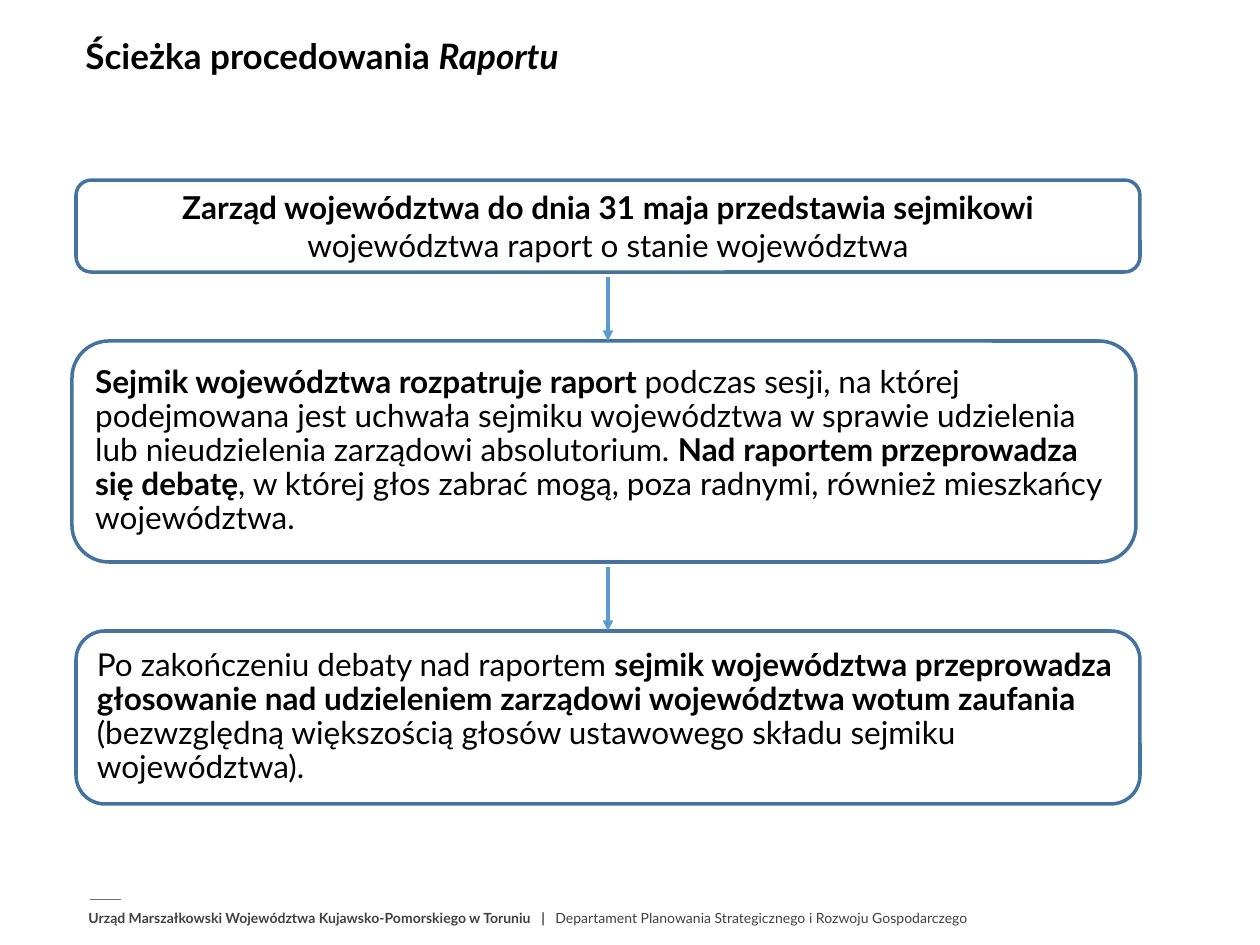
from dataclasses import dataclass

from lxml import etree
from pptx import Presentation
from pptx.dml.color import RGBColor
from pptx.enum.shapes import MSO_CONNECTOR, MSO_SHAPE
from pptx.enum.text import MSO_ANCHOR, PP_ALIGN
from pptx.oxml.ns import qn
from pptx.util import Emu, Pt

EMU_PER_PX = 914400 / 126
ROUNDED = MSO_SHAPE.ROUNDED_RECTANGLE
STRAIGHT = MSO_CONNECTOR.STRAIGHT
TOP, MIDDLE, BOTTOM = MSO_ANCHOR.TOP, MSO_ANCHOR.MIDDLE, MSO_ANCHOR.BOTTOM
LEFT, CENTER = PP_ALIGN.LEFT, PP_ALIGN.CENTER
BLACK, GREY, RULE_GREY = "000000", "414141", "6E6E6E"
BOX_BLUE, ARROW_BLUE = "43739E", "5B9BD5"


@dataclass(frozen=True)
class Run:
    text: str
    bold: bool = False
    italic: bool = False


@dataclass(frozen=True)
class Frame:
    left: int
    top: int
    width: int
    height: int


@dataclass(frozen=True)
class TextStyle:
    size: int
    color: str = BLACK
    anchor: MSO_ANCHOR = MIDDLE
    alignment: PP_ALIGN = LEFT
    line_spacing: float | Pt = 0.9
    tabs: tuple[int, ...] = ()


@dataclass(frozen=True)
class Step:
    frame: Frame
    style: TextStyle
    runs: tuple[Run, ...]


@dataclass(frozen=True)
class Line:
    start: tuple[int, int]
    end: tuple[int, int]
    color: str
    weight: float
    arrow: bool = False


def px(value: int) -> Emu:
    return Emu(round(value * EMU_PER_PX))


def rgb(color: str) -> RGBColor:
    return RGBColor.from_string(color)


def apply(target, values: dict) -> None:
    for name, value in values.items():
        setattr(target, name, value)


def place(frame: Frame) -> list[Emu]:
    return [px(v) for v in (frame.left, frame.top, frame.width, frame.height)]


def write_text(shape, runs: tuple[Run, ...], style: TextStyle) -> None:
    apply(shape.text_frame, {"word_wrap": True, "vertical_anchor": style.anchor})
    paragraph = shape.text_frame.paragraphs[0]
    if style.tabs:
        properties = paragraph._p.get_or_add_pPr()
        tab_list = etree.SubElement(properties, qn("a:tabLst"))
        for position in style.tabs:
            etree.SubElement(tab_list, qn("a:tab"), pos=str(px(position)), algn="l")
    apply(paragraph, {"alignment": style.alignment, "line_spacing": style.line_spacing})
    for item in runs:
        run = paragraph.add_run()
        run.text = item.text
        apply(run.font, {"name": "Lato", "size": Pt(style.size),
                         "bold": item.bold, "italic": item.italic})
        run.font.color.rgb = rgb(style.color)


def add_text(slide, frame: Frame, style: TextStyle, runs: tuple[Run, ...]) -> None:
    write_text(slide.shapes.add_textbox(*place(frame)), runs, style)


def add_step(slide, step: Step) -> None:
    shape = slide.shapes.add_shape(ROUNDED, *place(step.frame))
    shape.shadow.inherit = False
    shape.fill.background()
    shape.line.color.rgb = rgb(BOX_BLUE)
    shape.line.width = Pt(2)
    write_text(shape, step.runs, step.style)


def add_line(slide, line: Line) -> None:
    ends = [px(value) for value in line.start + line.end]
    connector = slide.shapes.add_connector(STRAIGHT, *ends)
    connector.line.color.rgb = rgb(line.color)
    connector.line.width = Pt(line.weight)
    if line.arrow:
        etree.SubElement(connector.line._get_or_add_ln(), qn("a:tailEnd"), type="triangle")
    etree.SubElement(connector._element.spPr, qn("a:effectLst"))


BODY = TextStyle(18)
STEPS = (
    Step(Frame(76, 180, 1064, 92), TextStyle(18, alignment=CENTER, line_spacing=1.0), (
        Run("Zarząd województwa do dnia 31 maja przedstawia sejmikowi ", bold=True),
        Run("województwa raport o stanie województwa"),
    )),
    Step(Frame(72, 341, 1064, 221), BODY, (
        Run("Sejmik województwa rozpatruje raport ", bold=True),
        Run("podczas sesji, na której podejmowana jest uchwała sejmiku województwa "
            "w sprawie udzielenia lub nieudzielenia zarządowi absolutorium. "),
        Run("Nad raportem przeprowadza się debatę", bold=True),
        Run(", w której głos zabrać mogą, poza radnymi, również mieszkańcy województwa."),
    )),
    Step(Frame(76, 631, 1064, 173), BODY, (
        Run("Po zakończeniu debaty nad raportem "),
        Run("sejmik województwa przeprowadza głosowanie nad udzieleniem zarządowi "
            "województwa wotum zaufania ", bold=True),
        Run("(bezwzględną większością głosów ustawowego składu sejmiku województwa)."),
    )),
)
ARROW_X, ARROW_LENGTH = 608, 64


def main() -> None:
    presentation = Presentation()
    apply(presentation, {"slide_width": px(1260), "slide_height": px(945)})
    slide = presentation.slides.add_slide(presentation.slide_layouts[6])

    add_line(slide, Line((90, 899), (121, 899), RULE_GREY, 0.5))
    add_text(slide, Frame(76, 905, 1013, 28),
             TextStyle(8, GREY, TOP, tabs=(453, 467)), (
                 Run("Urząd Marszałkowski Województwa Kujawsko-Pomorskiego w Toruniu\t|\t",
                     bold=True),
                 Run("Departament Planowania Strategicznego i Rozwoju Gospodarczego"),
             ))
    add_text(slide, Frame(73, 25, 905, 58),
             TextStyle(20, anchor=BOTTOM, line_spacing=Pt(28)), (
                 Run("Ścieżka procedowania ", bold=True),
                 Run("Raportu", bold=True, italic=True),
             ))
    for step in STEPS:
        add_step(slide, step)
    for step in STEPS[1:]:
        top = step.frame.top
        add_line(slide, Line((ARROW_X, top - ARROW_LENGTH), (ARROW_X, top),
                             ARROW_BLUE, 2, arrow=True))

    presentation.save("out.pptx")


if __name__ == "__main__":
    main()
